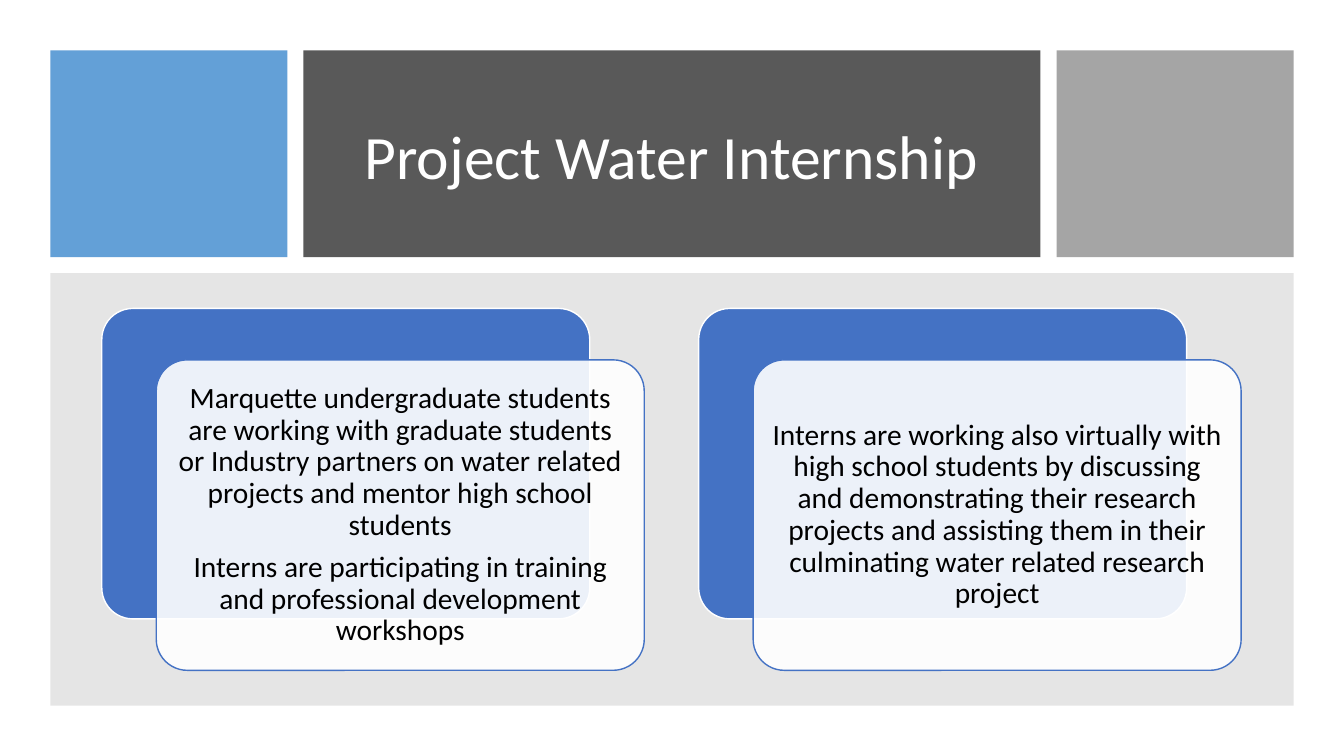
import pptx
import pptx.dml.color
import pptx.enum.shapes
import pptx.enum.text
import pptx.oxml
import pptx.oxml.ns
import pptx.util

TITLE = "Project Water Internship"
CARDS = [
    [
        "Marquette undergraduate students are working with graduate students or "
        "Industry partners on water related projects and mentor high school students",
        "Interns are participating in training and professional development workshops",
    ],
    [
        "Interns are working also virtually with high school students by discussing and "
        "demonstrating their research projects and assisting them in their culminating "
        "water related research project",
    ],
]

FONT = "Calibri"
WHITE, BLACK, BLUE = "FFFFFF", "000000", "4472C4"
SLIDE_WIDTH, SLIDE_HEIGHT = 13.33, 7.5
MARGIN, GAP = 0.5, 0.16
HEADER_HEIGHT, SIDE_WIDTH = 2.05, 2.35
CONTENT_WIDTH = SLIDE_WIDTH - 2 * MARGIN
BANNER_LEFT = MARGIN + SIDE_WIDTH + GAP
BANNER_WIDTH = CONTENT_WIDTH - 2 * (SIDE_WIDTH + GAP)
BODY_TOP = MARGIN + HEADER_HEIGHT + GAP
CARD_WIDTH, CARD_HEIGHT = 4.84, 3.08
CARD_LEFT, CARD_TOP, CARD_PITCH = 1.01, 3.06, 5.92
OFFSET_X, OFFSET_Y = 0.54, 0.51
INSET = 0.09


def color(hex_string):
    return pptx.dml.color.RGBColor.from_string(hex_string)


def add_block(slide, box, fill, opacity=100, line=None, rounded=False):
    """Add a filled rectangle; box is left, top, width, height in inches."""
    kinds = pptx.enum.shapes.MSO_SHAPE
    kind = kinds.ROUNDED_RECTANGLE if rounded else kinds.RECTANGLE
    shape = slide.shapes.add_shape(kind, *map(pptx.util.Inches, box))
    shape.shadow.inherit = False
    shape.fill.solid()
    shape.fill.fore_color.rgb = color(fill)
    if opacity < 100:
        tint = shape.element.spPr.find(".//" + pptx.oxml.ns.qn("a:srgbClr"))
        alpha = pptx.oxml.parse_xml(
            f'<a:alpha {pptx.oxml.ns.nsdecls("a")} val="{opacity * 1000}"/>')
        tint.append(alpha)
    if line:
        shape.line.color.rgb = color(line)
        shape.line.width = pptx.util.Pt(1)
    else:
        shape.line.fill.background()
    if rounded:
        shape.adjustments[0] = 0.1
    return shape


def write(shape, lines, size, font_color, space_after=0):
    frame = shape.text_frame
    frame.text = "\n".join(lines)
    frame.word_wrap = True
    frame.auto_size = pptx.enum.text.MSO_AUTO_SIZE.NONE
    frame.vertical_anchor = pptx.enum.text.MSO_ANCHOR.MIDDLE
    for paragraph in frame.paragraphs:
        paragraph.alignment = pptx.enum.text.PP_ALIGN.CENTER
        paragraph.line_spacing = 0.9
        paragraph.space_before = pptx.util.Pt(0)
        paragraph.space_after = pptx.util.Pt(space_after)
        for run in paragraph.runs:
            run.font.name = FONT
            run.font.size = pptx.util.Pt(size)
            run.font.color.rgb = color(font_color)


def add_header(slide):
    header = [
        (MARGIN, SIDE_WIDTH, "5B9BD5", 95),
        (BANNER_LEFT, BANNER_WIDTH, "595959", 100),
        (BANNER_LEFT + BANNER_WIDTH + GAP, SIDE_WIDTH, "A5A5A5", 100),
    ]
    for left, width, fill, opacity in header:
        block = add_block(slide, (left, MARGIN, width, HEADER_HEIGHT), fill, opacity)
    title = slide.shapes.title
    title.left, title.top, title.width, title.height = map(
        pptx.util.Inches, (3.33, 0.8, 6.66, 1.56))
    write(title, [TITLE], 44, WHITE)
    block.element.addnext(title.element)  # bring the title in front of its banner


def add_card(slide, left, lines):
    size = (CARD_WIDTH, CARD_HEIGHT)
    add_block(slide, (left, CARD_TOP, *size), BLUE, line=WHITE, rounded=True)
    front = add_block(slide, (left + OFFSET_X, CARD_TOP + OFFSET_Y, *size),
                      WHITE, 90, BLUE, rounded=True)
    write(front, lines, 21, BLACK, space_after=7.35)
    frame = front.text_frame
    frame.margin_left = frame.margin_right = pptx.util.Inches(INSET)
    frame.margin_top = frame.margin_bottom = pptx.util.Inches(INSET)


def main():
    presentation = pptx.Presentation()
    presentation.slide_width = pptx.util.Inches(SLIDE_WIDTH)
    presentation.slide_height = pptx.util.Inches(SLIDE_HEIGHT)
    slide = presentation.slides.add_slide(presentation.slide_layouts[5])
    add_header(slide)
    body_height = SLIDE_HEIGHT - MARGIN - BODY_TOP
    add_block(slide, (MARGIN, BODY_TOP, CONTENT_WIDTH, body_height), "808080", 20)
    for column, lines in enumerate(CARDS):
        add_card(slide, CARD_LEFT + column * CARD_PITCH, lines)
    presentation.save("out.pptx")


if __name__ == "__main__":
    main()
